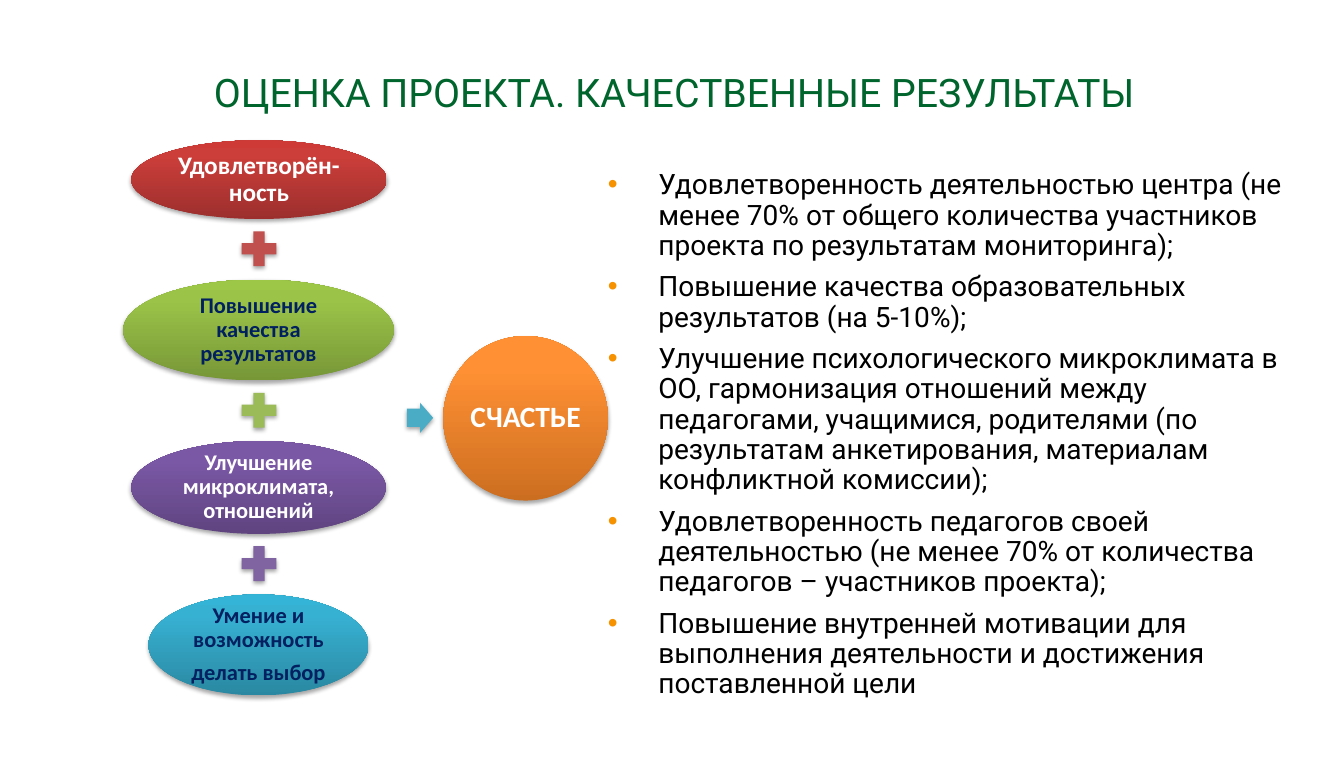
from dataclasses import dataclass

from lxml.etree import SubElement
from pptx import Presentation
from pptx.dml.color import RGBColor
from pptx.enum.shapes import MSO_SHAPE
from pptx.enum.text import MSO_ANCHOR, PP_ALIGN
from pptx.oxml.ns import qn
from pptx.shapes.autoshape import Shape
from pptx.slide import Slide
from pptx.text.text import TextFrame, _Paragraph
from pptx.util import Emu, Pt

EMU_PER_PX = 9144
AXIS_X = 256
STACK_TOP = 139
PLUS_SIZE = 47
PLUS_OFFSET = 6
STACK_GAP = 60
INDENT = 50

WHITE = RGBColor(0xFF, 0xFF, 0xFF)
BLACK = RGBColor(0, 0, 0)
NAVY = RGBColor(0x00, 0x20, 0x60)
GREEN = RGBColor(0x00, 0x64, 0x2D)
AMBER = RGBColor(0xF6, 0x92, 0x00)
TEAL = RGBColor(0x4B, 0xAC, 0xC6)
PLUS_RED = RGBColor(0xC0, 0x50, 0x4D)
PLUS_GREEN = RGBColor(0x9B, 0xBB, 0x59)
PLUS_PURPLE = RGBColor(0x80, 0x64, 0xA2)
RED_SHADES = (RGBColor(0x9C, 0x2F, 0x2D), RGBColor(0xCB, 0x3E, 0x3A), RGBColor(0xCE, 0x3B, 0x37))
GREEN_SHADES = (RGBColor(0x77, 0x97, 0x37), RGBColor(0x9B, 0xC3, 0x48), RGBColor(0x9D, 0xC7, 0x46))
PURPLE_SHADES = (RGBColor(0x5F, 0x44, 0x80), RGBColor(0x7B, 0x58, 0xA6), RGBColor(0x7C, 0x57, 0xA8))
BLUE_SHADES = (RGBColor(0x2A, 0x88, 0xA2), RGBColor(0x37, 0xB1, 0xD2), RGBColor(0x34, 0xB4, 0xD6))
ORANGE_SHADES = (RGBColor(0xCC, 0x6E, 0x20), RGBColor(0xFF, 0x90, 0x34), RGBColor(0xFF, 0x91, 0x36))


@dataclass(frozen=True)
class Box:
    left: int
    top: int
    width: int
    height: int

    def emu(self) -> tuple[Emu, Emu, Emu, Emu]:
        return px(self.left), px(self.top), px(self.width), px(self.height)


@dataclass(frozen=True)
class Oval:
    lines: tuple[str, ...]
    size: int
    text_color: RGBColor
    shades: tuple[RGBColor, RGBColor, RGBColor]


@dataclass(frozen=True)
class Factor:
    width: int
    height: int
    oval: Oval
    plus_color: RGBColor | None = None


TITLE = "ОЦЕНКА ПРОЕКТА. КАЧЕСТВЕННЫЕ РЕЗУЛЬТАТЫ"
FACTORS = (
    Factor(253, 78, Oval(("Удовлетворён-ность",), 18, WHITE, RED_SHADES), PLUS_RED),
    Factor(268, 100, Oval(("Повышение качества результатов",), 16, NAVY, GREEN_SHADES), PLUS_GREEN),
    Factor(252, 92, Oval(("Улучшение микроклимата, отношений",), 16, WHITE, PURPLE_SHADES), PLUS_PURPLE),
    Factor(218, 100, Oval(("Умение и возможность", "делать выбор"), 16, NAVY, BLUE_SHADES)),
)
HAPPINESS = Oval(("СЧАСТЬЕ",), 21, WHITE, ORANGE_SHADES)
RESULTS = (
    "Удовлетворенность деятельностью центра (не менее 70% от общего количества участников проекта по результатам мониторинга);",
    "Повышение качества образовательных результатов (на 5-10%);",
    "Улучшение психологического микроклимата в ОО, гармонизация отношений между педагогами, учащимися, родителями (по результатам анкетирования, материалам конфликтной комиссии);",
    "Удовлетворенность педагогов своей деятельностью (не менее 70% от количества педагогов – участников проекта);",
    "Повышение внутренней мотивации для выполнения деятельности и достижения поставленной цели",
)


def px(length: int) -> Emu:
    return Emu(length * EMU_PER_PX)


def set_frame(frame: TextFrame, side: int, edge: int) -> None:
    frame.word_wrap = True
    frame.margin_left = frame.margin_right = px(side)
    frame.margin_top = frame.margin_bottom = px(edge)


def set_paragraph(paragraph: _Paragraph, text: str, font: str, size: int,
                  color: RGBColor, bold: bool = False) -> None:
    paragraph.text = text
    paragraph.line_spacing = 0.9
    paragraph.font.name = font
    paragraph.font.size = Pt(size)
    paragraph.font.bold = bold
    paragraph.font.color.rgb = color


def add_shadowed(slide: Slide, kind: MSO_SHAPE, box: Box) -> Shape:
    shape = slide.shapes.add_shape(kind, *box.emu())
    shape.line.fill.background()
    shape.shadow.inherit = False
    effects = shape._element.spPr.find(qn("a:effectLst"))
    shadow = SubElement(effects, qn("a:outerShdw"), blurRad=str(Pt(3.1)),
                        dist=str(Pt(1.8)), dir="5400000", rotWithShape="0")
    black = SubElement(shadow, qn("a:srgbClr"), val=str(BLACK))
    SubElement(black, qn("a:alpha"), val="35000")
    return shape


def add_symbol(slide: Slide, kind: MSO_SHAPE, box: Box, color: RGBColor) -> Shape:
    symbol = add_shadowed(slide, kind, box)
    symbol.fill.solid()
    symbol.fill.fore_color.rgb = color
    return symbol


def add_oval(slide: Slide, box: Box, oval: Oval) -> None:
    shape = add_shadowed(slide, MSO_SHAPE.OVAL, box)
    shape.fill.gradient()
    shape.fill.gradient_angle = 90
    stops = shape._element.spPr.find(qn("a:gradFill")).find(qn("a:gsLst"))
    for stop in list(stops):
        stops.remove(stop)
    for position, shade in zip((0, 80, 100), oval.shades):
        stop = SubElement(stops, qn("a:gs"), pos=str(position * 1000))
        SubElement(stop, qn("a:srgbClr"), val=str(shade))
    frame = shape.text_frame
    set_frame(frame, 2, 2)
    frame.vertical_anchor = MSO_ANCHOR.MIDDLE
    for index, line in enumerate(oval.lines):
        paragraph = frame.add_paragraph() if index else frame.paragraphs[0]
        set_paragraph(paragraph, line, "Calibri", oval.size, oval.text_color, True)
        paragraph.alignment = PP_ALIGN.CENTER
        paragraph.space_after = Pt(6 if index < len(oval.lines) - 1 else 0)


def add_factors(slide: Slide) -> None:
    top = STACK_TOP
    for factor in FACTORS:
        box = Box(AXIS_X - factor.width // 2, top, factor.width, factor.height)
        add_oval(slide, box, factor.oval)
        bottom = top + factor.height
        if factor.plus_color is not None:
            plus = Box(AXIS_X - PLUS_SIZE // 2, bottom + PLUS_OFFSET, PLUS_SIZE, PLUS_SIZE)
            add_symbol(slide, MSO_SHAPE.MATH_PLUS, plus, factor.plus_color)
        top = bottom + STACK_GAP


def add_title(slide: Slide) -> None:
    frame = slide.shapes.add_textbox(*Box(2, 73, 1331, 42).emu()).text_frame
    set_frame(frame, 0, 0)
    set_paragraph(frame.paragraphs[0], TITLE, "Roboto", 28, GREEN)
    frame.paragraphs[0].alignment = PP_ALIGN.CENTER


def add_results(slide: Slide) -> None:
    frame = slide.shapes.add_textbox(*Box(602, 162, 694, 528).emu()).text_frame
    set_frame(frame, 0, 7)
    for index, result in enumerate(RESULTS):
        paragraph = frame.add_paragraph() if index else frame.paragraphs[0]
        properties = paragraph._p.get_or_add_pPr()
        properties.set("marL", str(px(INDENT)))
        properties.set("indent", str(px(-INDENT)))
        bullet_color = SubElement(properties, qn("a:buClr"))
        SubElement(bullet_color, qn("a:srgbClr"), val=str(AMBER))
        SubElement(properties, qn("a:buFont"), typeface="Arial")
        SubElement(properties, qn("a:buChar"), char="•")
        set_paragraph(paragraph, result, "Roboto", 20, BLACK)
        if index:
            paragraph.space_before = Pt(8)


def main() -> None:
    presentation = Presentation()
    presentation.slide_width = px(1331)
    presentation.slide_height = px(750)
    slide = presentation.slides.add_slide(presentation.slide_layouts[6])
    add_title(slide)
    add_factors(slide)
    arrow = add_symbol(slide, MSO_SHAPE.RIGHT_ARROW, Box(403, 399, 26, 30), TEAL)
    arrow.adjustments[0] = 0.6
    add_oval(slide, Box(439, 333, 163, 163), HAPPINESS)
    add_results(slide)
    presentation.save("out.pptx")


if __name__ == "__main__":
    main()
